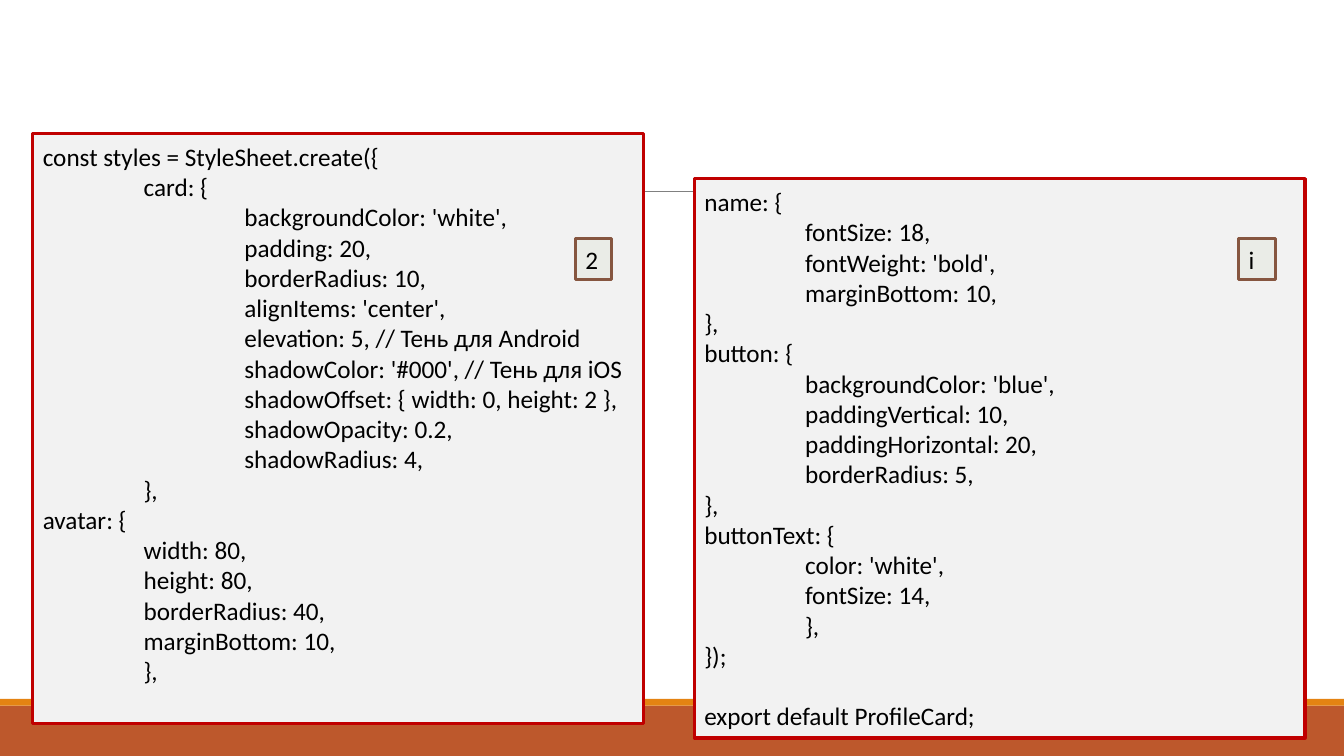
from pptx import Presentation
from pptx.dml.color import RGBColor
from pptx.enum.shapes import MSO_CONNECTOR as Connector, MSO_SHAPE as Shape
from pptx.enum.text import MSO_ANCHOR as Anchor, PP_ALIGN as Align
from pptx.oxml.ns import qn
from pptx.util import Cm, Pt
from lxml.etree import SubElement

COLORS = {
    "band": "BD582C", "stripe": "E48312", "rule": "808080",
    "panel": "F2F2F2", "frame": "C00000",
    "badge": "EAECE7", "badge_frame": "865640", "text": "000000",
}
FONT, SIZE = "Calibri", 18
LINE_HEIGHT = Pt(SIZE * 1.2)
TAB_WIDTH = 2.54
WIDTH, HEIGHT = 33.87, 19.05

CARD_STYLES = """const styles = StyleSheet.create({
	card: {
		backgroundColor: 'white',
		padding: 20,
		borderRadius: 10,
		alignItems: 'center',
		elevation: 5, // Тень для Android
		shadowColor: '#000', // Тень для iOS
		shadowOffset: { width: 0, height: 2 },
		shadowOpacity: 0.2,
		shadowRadius: 4,
	},
avatar: {
	width: 80,
	height: 80,
	borderRadius: 40,
	marginBottom: 10,
	},"""

BUTTON_STYLES = """name: {
	fontSize: 18,
	fontWeight: 'bold',
	marginBottom: 10,
},
button: {
	backgroundColor: 'blue',
	paddingVertical: 10,
	paddingHorizontal: 20,
	borderRadius: 5,
},
buttonText: {
	color: 'white',
	fontSize: 14,
	},
});

export default ProfileCard;"""


def color(name):
    return RGBColor.from_string(COLORS[name])


def add_box(slide, left, top, width, height, fill, frame=None):
    shape = slide.shapes.add_shape(
        Shape.RECTANGLE, Cm(left), Cm(top), Cm(width), Cm(height))
    shape.shadow.inherit = False
    shape.fill.solid()
    shape.fill.fore_color.rgb = color(fill)
    if frame:
        shape.line.color.rgb = color(frame)
        shape.line.width = Pt(2.25)
    else:
        shape.line.fill.background()
    return shape


def set_tabs(paragraph, count):
    """Give the paragraph evenly spaced tab stops."""
    stops = SubElement(paragraph._p.get_or_add_pPr(), qn("a:tabLst"))
    for number in range(1, count + 1):
        SubElement(stops, qn("a:tab"), pos=str(Cm(TAB_WIDTH * number)), algn="l")


def write_lines(shape, text):
    """Write one paragraph per line; an empty line becomes space before the next."""
    frame = shape.text_frame
    frame.word_wrap = True
    frame.vertical_anchor = Anchor.TOP
    paragraph, gap = frame.paragraphs[0], False
    for index, line in enumerate(text.split("\n")):
        if not line:
            gap = True
            continue
        if index:
            paragraph = frame.add_paragraph()
        depth = line.count("\t")
        if depth:
            set_tabs(paragraph, depth)
        paragraph.alignment = Align.LEFT
        if gap:
            paragraph.space_before, gap = LINE_HEIGHT, False
        run = paragraph.add_run()
        run.text = line
        run.font.name = FONT
        run.font.size = Pt(SIZE)
        run.font.color.rgb = color("text")


# Footer bands and the thin rule behind the panels
def add_backdrop(slide, width, height):
    band, stripe = 1.27, 0.17
    add_box(slide, 0, height - band, width, band, "band")
    add_box(slide, 0, height - band - stripe, width, stripe, "stripe")
    rule = slide.shapes.add_connector(
        Connector.STRAIGHT, Cm(3.33), Cm(4.82), Cm(31.01), Cm(4.82))
    rule.line.color.rgb = color("rule")
    rule.line.width = Pt(0.5)
    SubElement(rule.element.spPr, qn("a:effectLst"))


# Framed code listing with a small badge placed relative to its corner
def add_code_panel(slide, left, top, width, height, code, badge, badge_offset):
    panel = add_box(slide, left, top, width, height, "panel", "frame")
    write_lines(panel, code)
    panel.text_frame.margin_top = Cm(0.2)
    across, down = badge_offset
    label = add_box(slide, left + across, top + down, 0.92, 1.02,
                    "badge", "badge_frame")
    write_lines(label, badge)


def main():
    presentation = Presentation()
    presentation.slide_width, presentation.slide_height = Cm(WIDTH), Cm(HEIGHT)
    slide = presentation.slides.add_slide(presentation.slide_layouts[6])
    add_backdrop(slide, WIDTH, HEIGHT)
    add_code_panel(slide, 0.83, 3.36, 15.39, 14.88, CARD_STYLES, "2", (13.67, 2.66))
    add_code_panel(slide, 17.5, 4.5, 15.39, 14.1, BUTTON_STYLES, "і", (13.72, 1.52))
    presentation.save("out.pptx")


if __name__ == "__main__":
    main()
